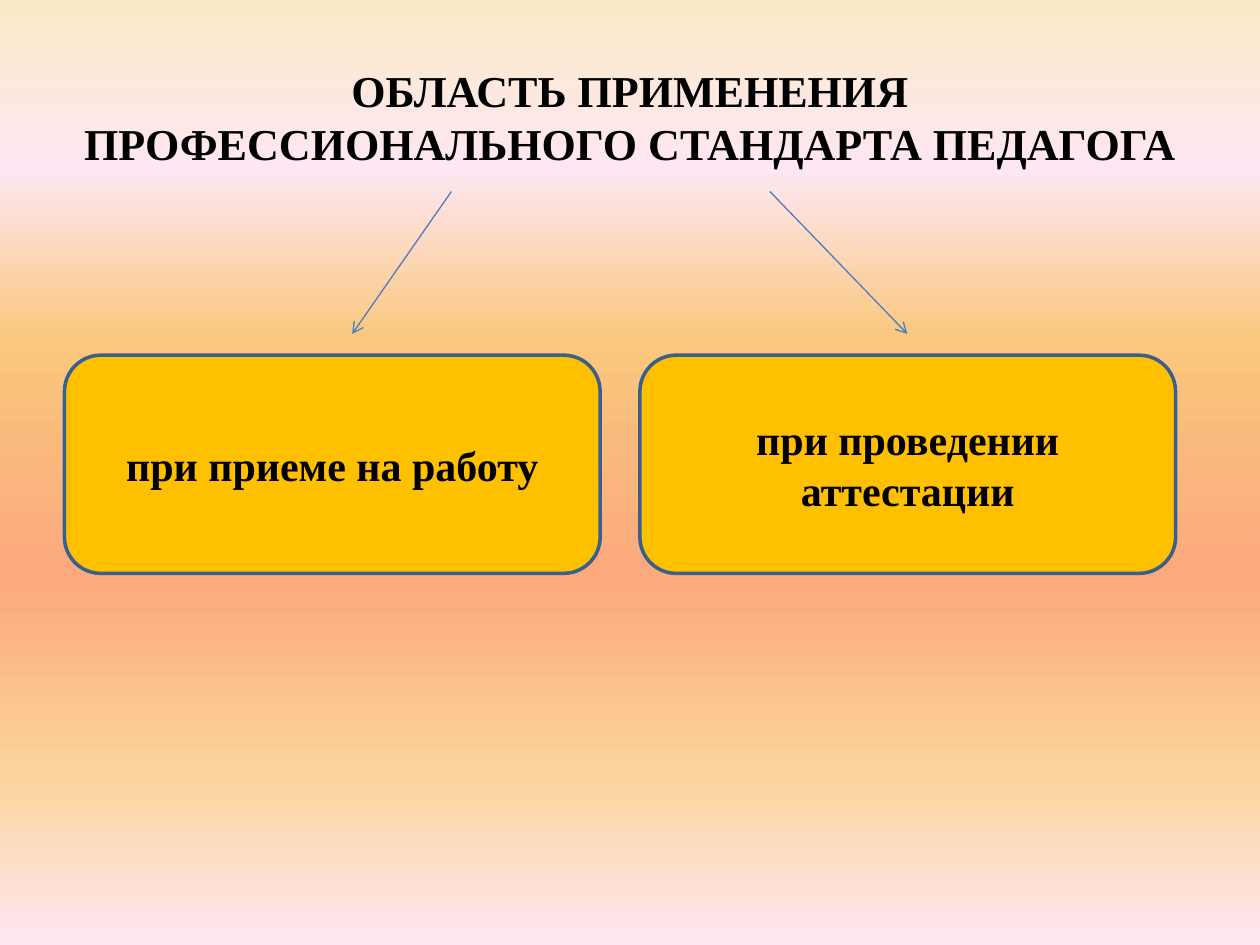
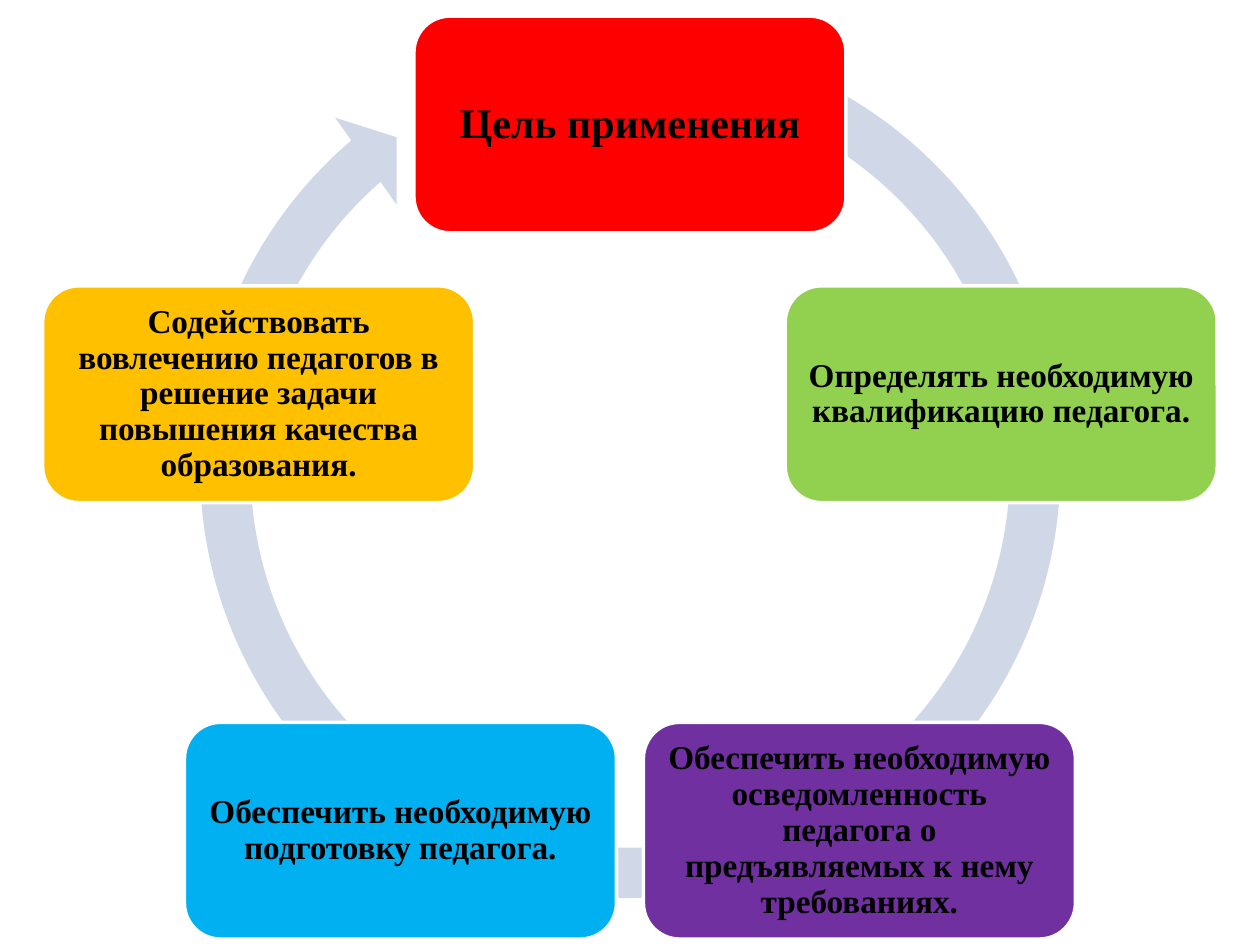
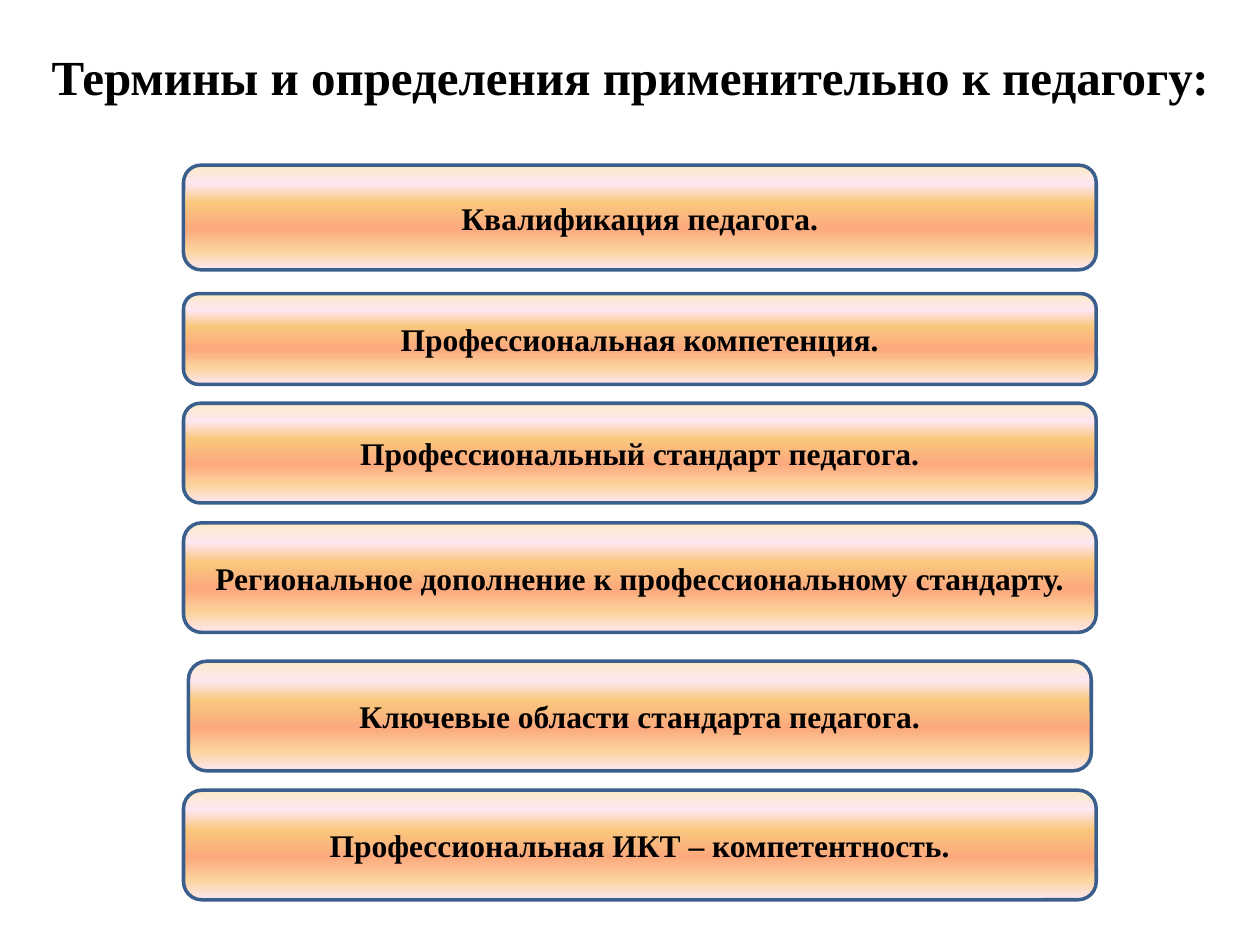
from math import cos, radians, sin

from lxml.etree import SubElement
from pptx import Presentation
from pptx.dml.color import RGBColor
from pptx.enum.shapes import MSO_CONNECTOR, MSO_SHAPE
from pptx.enum.text import MSO_ANCHOR, PP_ALIGN
from pptx.oxml.ns import qn
from pptx.util import Cm, Pt

BLACK = RGBColor(0x00, 0x00, 0x00)
WHITE = RGBColor(0xFF, 0xFF, 0xFF)
RED = RGBColor(0xFF, 0x00, 0x00)
GREEN = RGBColor(0x92, 0xD0, 0x50)
PURPLE = RGBColor(0x70, 0x30, 0xA0)
SKY = RGBColor(0x00, 0xB0, 0xF0)
AMBER = RGBColor(0xFF, 0xC0, 0x00)
STEEL = RGBColor(0x3A, 0x5F, 0x8C)
ARROW_BLUE = RGBColor(0x4B, 0x7E, 0xBC)
PALE_BLUE = RGBColor(0xD0, 0xD8, 0xE8)
CREAM = RGBColor(0xFB, 0xEA, 0xC7)
PINK = RGBColor(0xFE, 0xE7, 0xF2)
HONEY = RGBColor(0xFA, 0xC7, 0x7D)
SALMON = RGBColor(0xFB, 0xA9, 0x7D)
SAND = RGBColor(0xFB, 0xD4, 0x9C)

SUNSET = [(0, CREAM), (18, PINK), (36, HONEY), (61, SALMON), (82, SAND), (100, PINK)]
FONT = {"name": "Times New Roman", "bold": True}
FRAME = {"word_wrap": True, "vertical_anchor": MSO_ANCHOR.MIDDLE}
TITLE_ONLY, BLANK = 5, 6


def write_text(shape, text, size):
    frame = shape.text_frame
    frame.text = text
    for key, value in FRAME.items():
        setattr(frame, key, value)
    paragraph = frame.paragraphs[0]
    paragraph.alignment = PP_ALIGN.CENTER
    font = paragraph.runs[0].font
    for key, value in {**FONT, "size": Pt(size)}.items():
        setattr(font, key, value)
    font.color.rgb = BLACK


def add_card(slide, text, size, place, fill, outline):
    """Add a rounded card; place is left, top, width and height in cm."""
    card = slide.shapes.add_shape(MSO_SHAPE.ROUNDED_RECTANGLE, *map(Cm, place))
    card.shadow.inherit = False
    card.fill.solid()
    card.fill.fore_color.rgb = fill
    card.line.color.rgb = outline
    card.line.width = Pt(2)
    write_text(card, text, size)
    return card


deck = Presentation()
deck.slide_width, deck.slide_height = Cm(25.4), Cm(19.05)
scope = deck.slides.add_slide(deck.slide_layouts[TITLE_ONLY])
goals = deck.slides.add_slide(deck.slide_layouts[BLANK])
terms = deck.slides.add_slide(deck.slide_layouts[TITLE_ONLY])

# Titles
for slide, text, size, place in [
    (scope, "ОБЛАСТЬ ПРИМЕНЕНИЯ ПРОФЕССИОНАЛЬНОГО СТАНДАРТА ПЕДАГОГА", 25.2,
     (1.27, 0.76, 22.86, 3.18)),
    (terms, "Термины и определения применительно к педагогу:", 28,
     (0.3, 0.53, 24.8, 2.01)),
]:
    title = slide.shapes.title
    title.left, title.top, title.width, title.height = map(Cm, place)
    write_text(title, text, size)

# Slide 1: where the standard applies
for left, text in [(1.3, "при приеме на работу"), (12.9, "при проведении аттестации")]:
    add_card(scope, text, 24, (left, 7.16, 10.8, 4.4), AMBER, STEEL)

for start_x, end_x in [(9.1, 7.1), (15.52, 18.29)]:
    arrow = scope.shapes.add_connector(
        MSO_CONNECTOR.STRAIGHT, Cm(start_x), Cm(3.86), Cm(end_x), Cm(6.73))
    arrow.line.color.rgb = ARROW_BLUE
    arrow.line.width = Pt(0.75)
    SubElement(arrow.line._get_or_add_ln(), qn("a:tailEnd"), type="arrow")
    SubElement(arrow._element.spPr, qn("a:effectLst"))

# Slide 2: goals evenly spaced around a circle
cycle = goals.shapes.add_shape(
    MSO_SHAPE.CIRCULAR_ARROW, Cm(3.47), Cm(0.2), Cm(18.47), Cm(18.47))
for index, value in enumerate([0.055, 3.307, 137.555, 173.984, 0.058]):
    cycle.adjustments[index] = value
cycle.shadow.inherit = False
cycle.fill.solid()
cycle.fill.fore_color.rgb = PALE_BLUE
cycle.line.fill.background()

CENTRE_X, CENTRE_Y, RADIUS = 12.7, 10.38, 7.87
GOAL_WIDTH, GOAL_HEIGHT = 8.71, 4.37
GOALS = [
    ("Цель применения", 24, RED),
    ("Определять необходимую квалификацию педагога.", 19, GREEN),
    ("Обеспечить необходимую осведомленность педагога о предъявляемых к нему "
     "требованиях.", 19, PURPLE),
    ("Обеспечить необходимую подготовку педагога.", 19, SKY),
    ("Содействовать вовлечению педагогов в решение задачи повышения качества "
     "образования.", 19, AMBER),
]
for index, (text, size, color) in enumerate(GOALS):
    angle = radians(360 / len(GOALS) * index)
    left = CENTRE_X + RADIUS * sin(angle) - GOAL_WIDTH / 2
    top = CENTRE_Y - RADIUS * cos(angle) - GOAL_HEIGHT / 2
    goal = add_card(goals, text, size, (left, top, GOAL_WIDTH, GOAL_HEIGHT), color, WHITE)
    goal.text_frame.paragraphs[0].line_spacing = 0.9
    for side in ("left", "top", "right", "bottom"):
        setattr(goal.text_frame, f"margin_{side}", Cm(0.2))

# Slide 3: terms, centred on one axis
TERMS_AXIS = 12.9
gradient_areas = [(scope.background.fill, scope._element)]
for text, top, width, height in [
    ("Квалификация педагога.", 3.33, 18.4, 2.11),
    ("Профессиональная компетенция.", 5.92, 18.4, 1.83),
    ("Профессиональный стандарт педагога.", 8.13, 18.4, 2.01),
    ("Региональное дополнение к профессиональному стандарту.", 10.54, 18.4, 2.21),
    ("Ключевые области стандарта педагога.", 13.33, 18.2, 2.21),
    ("Профессиональная ИКТ – компетентность.", 15.93, 18.4, 2.21),
]:
    term = add_card(terms, text, 18, (TERMS_AXIS - width / 2, top, width, height),
                    CREAM, STEEL)
    gradient_areas.append((term.fill, term._element))

# Sunset gradient from top to bottom
for fill, element in gradient_areas:
    fill.gradient()
    fill.gradient_angle = 270
    stops = element.find(".//" + qn("a:gsLst"))
    for stop in list(stops):
        stops.remove(stop)
    for percent, color in SUNSET:
        stop = SubElement(stops, qn("a:gs"), pos=str(percent * 1000))
        SubElement(stop, qn("a:srgbClr"), val=str(color))

deck.save("out.pptx")
